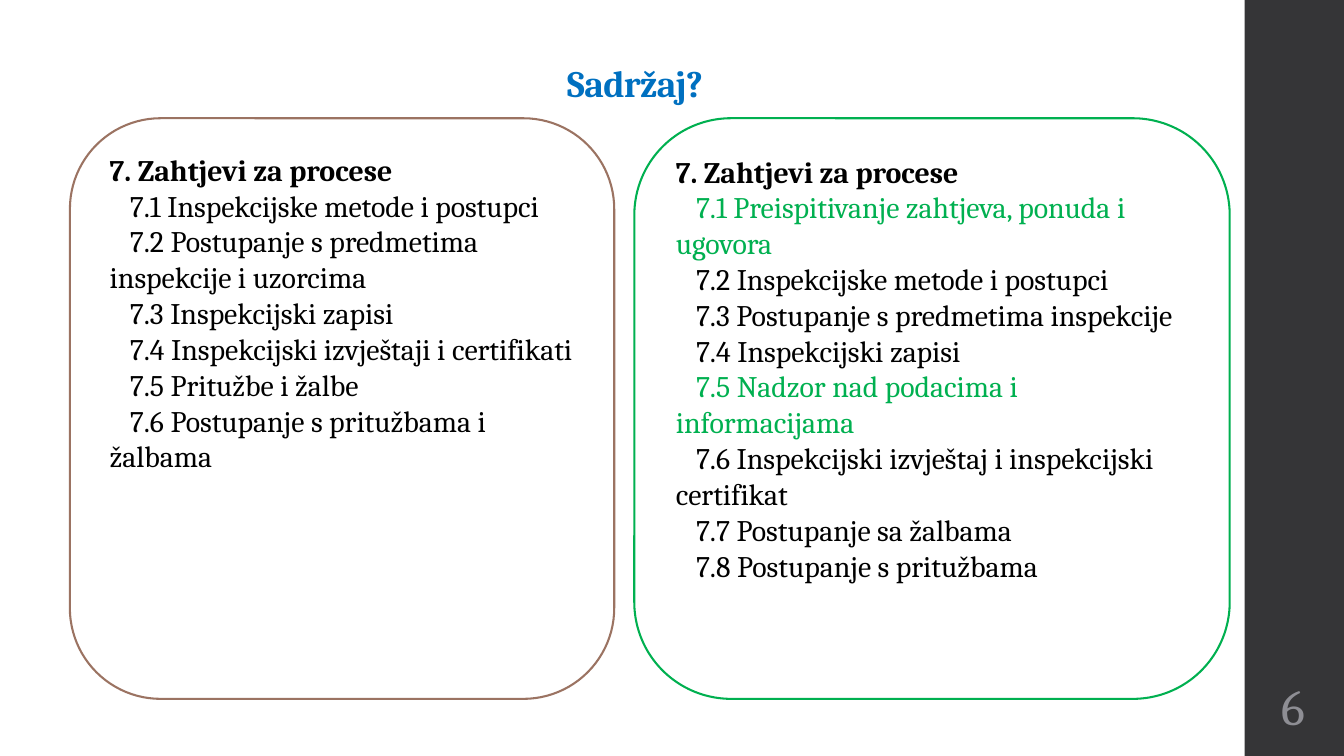
import pptx
import pptx.dml.color
import pptx.enum.shapes
import pptx.enum.text
import pptx.util
from pptx.util import Inches

FONT = "Cambria"
BLACK, GREEN = "000000", "00B050"
SLIDE_WIDTH = 10
SLIDE_HEIGHT = SLIDE_WIDTH * 9 / 16
HEADING = "7. Zahtjevi za procese"
PREVIOUS_EDITION = [
    ("7.1 Inspekcijske metode i postupci", BLACK),
    ("7.2 Postupanje s predmetima inspekcije i uzorcima", BLACK),
    ("7.3 Inspekcijski zapisi", BLACK),
    ("7.4 Inspekcijski izvještaji i certifikati", BLACK),
    ("7.5 Pritužbe i žalbe", BLACK),
    ("7.6 Postupanje s pritužbama i žalbama", BLACK),
]
NEW_EDITION = [
    ("7.1 Preispitivanje zahtjeva, ponuda i ugovora", GREEN),
    ("7.2 Inspekcijske metode i postupci", BLACK),
    ("7.3 Postupanje s predmetima inspekcije", BLACK),
    ("7.4 Inspekcijski zapisi", BLACK),
    ("7.5 Nadzor nad podacima i informacijama", GREEN),
    ("7.6 Inspekcijski izvještaj i inspekcijski certifikat", BLACK),
    ("7.7 Postupanje sa žalbama", BLACK),
    ("7.8 Postupanje s pritužbama", BLACK),
]


def color(hex_code):
    """Turn a hex string into a colour."""
    return pptx.dml.color.RGBColor.from_string(hex_code)


def write(paragraph, text, size=16, ink=BLACK, bold=False, align="LEFT",
          indent=0, line_spacing=1.0, tracking=0):
    """Write one formatted run into a paragraph."""
    paragraph.alignment = getattr(pptx.enum.text.PP_ALIGN, align)
    paragraph.line_spacing = line_spacing
    if indent:
        properties = paragraph._p.get_or_add_pPr()
        properties.set("marL", "0")
        properties.set("indent", str(Inches(indent)))
    run = paragraph.add_run()
    run.text = text
    run.font.name = FONT
    run.font.size = pptx.util.Pt(size)
    run.font.bold = bold
    run.font.color.rgb = color(ink)
    if tracking:
        run._r.get_or_add_rPr().set("spc", str(round(tracking * 100)))


def prepare_line_frame(frame):
    """Make a text frame without margins, centred vertically."""
    frame.word_wrap = True
    frame.auto_size = pptx.enum.text.MSO_AUTO_SIZE.NONE
    frame.vertical_anchor = pptx.enum.text.MSO_ANCHOR.MIDDLE
    frame.margin_left = frame.margin_right = 0
    frame.margin_top = frame.margin_bottom = 0
    return frame.paragraphs[0]


def add_panel(slide, kind, left, top, width, height, fill, outline=None):
    """Add a flat filled shape with an optional outline."""
    panel = slide.shapes.add_shape(
        getattr(pptx.enum.shapes.MSO_SHAPE, kind),
        Inches(left), Inches(top), Inches(width), Inches(height))
    panel.shadow.inherit = False
    panel.fill.solid()
    panel.fill.fore_color.rgb = color(fill)
    if outline:
        panel.line.color.rgb = color(outline)
        panel.line.width = pptx.util.Pt(1.1)
    else:
        panel.line.fill.background()
    return panel


def add_title(slide, left, top, width, height):
    """Place the slide title."""
    title = slide.shapes.title
    title.left, title.top = Inches(left), Inches(top)
    title.width, title.height = Inches(width), Inches(height)
    write(prepare_line_frame(title.text_frame), "Sadržaj?", size=20,
          ink="0070C0", bold=True, align="CENTER", line_spacing=0.9,
          tracking=-0.4)


def add_sidebar(slide, left, top, width, height):
    """Place the dark side band with the page number near its foot."""
    add_panel(slide, "RECTANGLE", left, top, width, height, "353537")
    number = slide.shapes.add_textbox(
        Inches(left - 0.15), Inches(top + height - 0.59),
        Inches(0.6), Inches(0.43))
    write(prepare_line_frame(number.text_frame), "6", size=27, ink="8E8E94",
          align="RIGHT")


def add_contents(slide, left, top, width, height, outline, clauses):
    """Place a rounded panel with a heading and its indented clauses."""
    panel = add_panel(slide, "ROUNDED_RECTANGLE", left, top, width, height,
                      "FFFFFF", outline)
    frame = panel.text_frame
    frame.word_wrap = True
    frame.vertical_anchor = pptx.enum.text.MSO_ANCHOR.TOP
    write(frame.paragraphs[0], HEADING, bold=True)
    for clause, ink in clauses:
        write(frame.add_paragraph(), clause, ink=ink, indent=0.15)


def main():
    """Build and save the presentation."""
    presentation = pptx.Presentation()
    presentation.slide_width = Inches(SLIDE_WIDTH)
    presentation.slide_height = Inches(SLIDE_HEIGHT)
    slide = presentation.slides.add_slide(presentation.slide_layouts[5])
    add_sidebar(slide, 9.26, 0, 0.75, SLIDE_HEIGHT)
    add_title(slide, 0.32, 0.42, 8.81, 0.43)
    add_contents(slide, 0.52, 0.88, 4.05, 4.32, "9B7362", PREVIOUS_EDITION)
    add_contents(slide, 4.72, 0.88, 4.43, 4.32, GREEN, NEW_EDITION)
    presentation.save("out.pptx")


if __name__ == "__main__":
    main()
